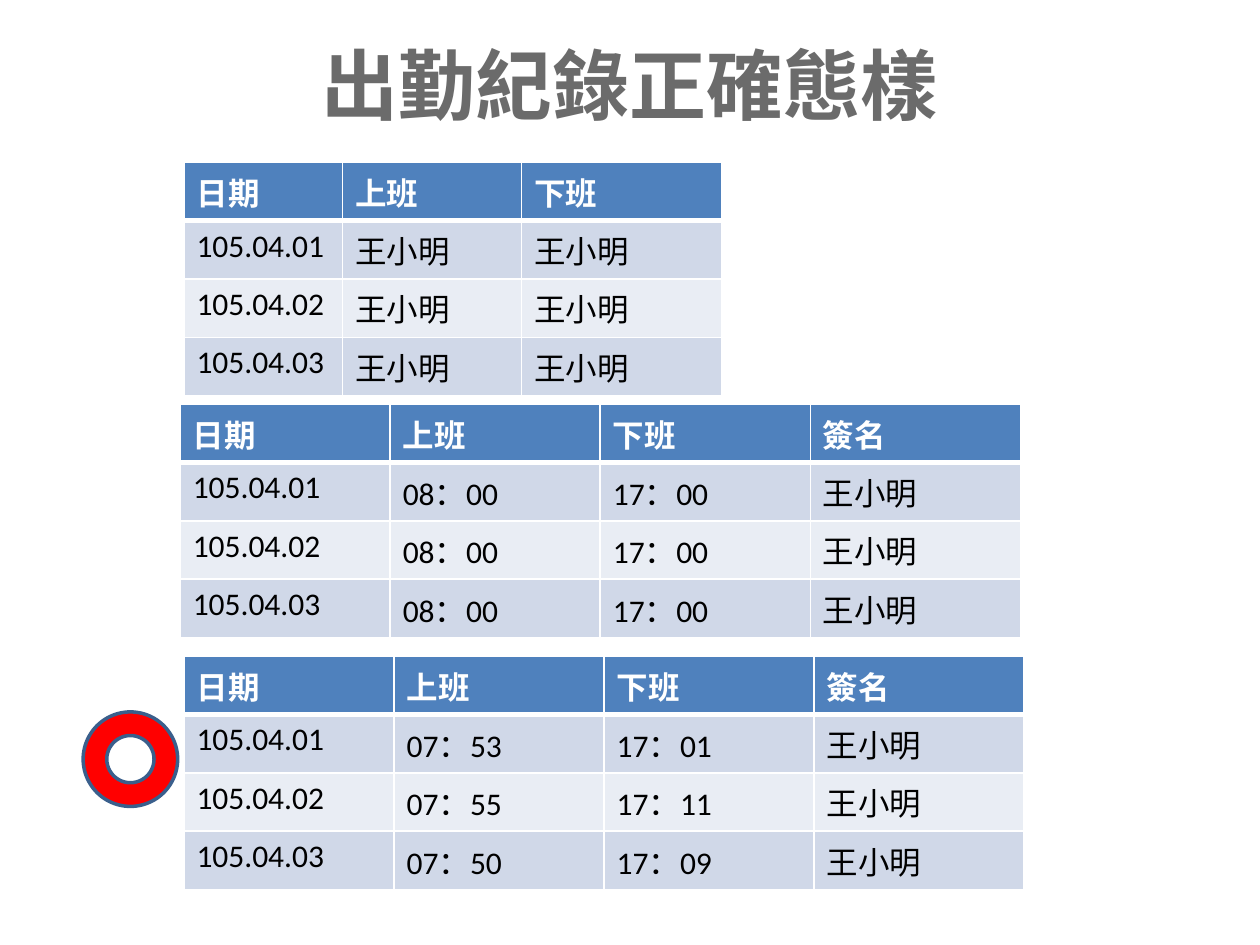
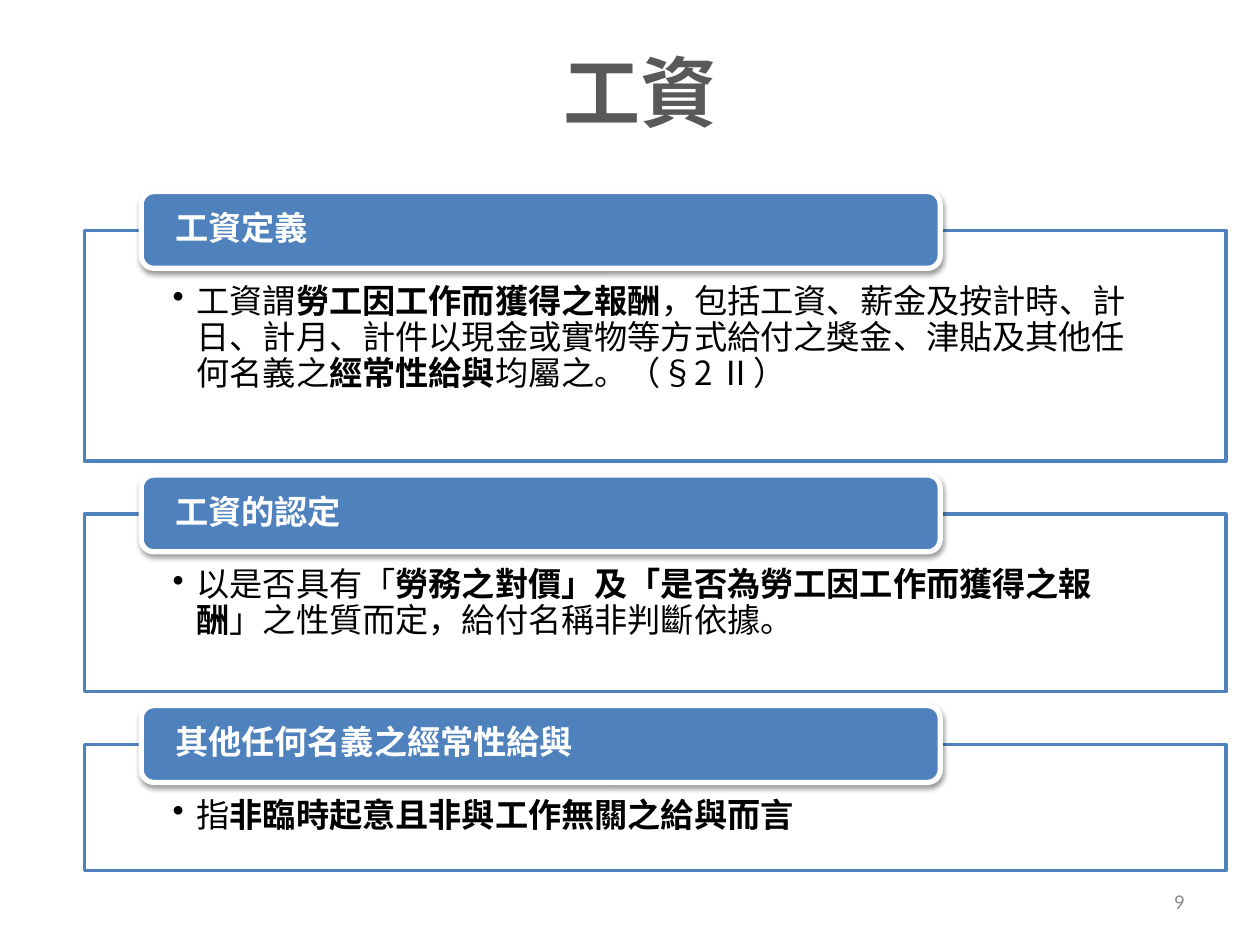
from copy import deepcopy

from lxml import etree
from pptx import Presentation
from pptx.dml.color import RGBColor
from pptx.enum import shapes, text
from pptx.oxml import ns
from pptx.util import Inches, Pt

CJK, LATIN = "Noto Sans CJK SC", "Calibri"
BLUE, WHITE, BLACK = "4F81BD", "FFFFFF", "000000"
BANDS = ["D0D8E8", "E9EDF4"]
TITLE_GRADIENT = [(0, "4C4C4C"), (0.5, "6B6B6B"), (1, "808080")]
DATES = ["105.04.01", "105.04.02", "105.04.03"]
WORKER = "王小明"


def color(code):
    return RGBColor.from_string(code)


def add_xml(parent, tag, **attributes):
    child = etree.SubElement(parent, ns.qn(tag))
    for name, value in attributes.items():
        child.set(name, str(value))
    return child


def add_color_xml(parent, code, alpha=100):
    entry = add_xml(parent, "a:srgbClr", val=code)
    if alpha < 100:
        add_xml(entry, "a:alpha", val=alpha * 1000)


def format_span(span, size, code, bold=False, face=CJK):
    span.font.size, span.font.bold, span.font.name = Pt(size), bold, face
    span.font.fill.solid()
    span.font.fill.fore_color.rgb = color(code)
    add_xml(span._r.get_or_add_rPr(), "a:ea", typeface=CJK)


def add_page(deck, title, box, code):
    page = deck.slides.add_slide(deck.slide_layouts[5])
    heading = page.shapes.title
    heading.left, heading.top, heading.width, heading.height = map(Inches, box)
    frame = heading.text_frame
    frame.text = title
    frame.vertical_anchor = text.MSO_ANCHOR.MIDDLE
    para = frame.paragraphs[0]
    para.alignment = text.PP_ALIGN.CENTER
    format_span(para.runs[0], 44, code, True)
    return page


def shade_title(page):
    """Give the title a vertical three-stop gradient."""
    span = page.shapes.title.text_frame.paragraphs[0].runs[0]
    fill = span.font.fill
    fill.gradient()
    fill.gradient_angle = 90
    stop_list = span._r.get_or_add_rPr().find(".//" + ns.qn("a:gsLst"))
    stop_list.insert(1, deepcopy(stop_list[0]))
    for stop, (position, code) in zip(fill.gradient_stops, TITLE_GRADIENT):
        stop.position = position
        stop.color.rgb = color(code)


def format_cell(cell, row):
    header = row == 0
    properties = cell._tc.get_or_add_tcPr()
    for side in "LRTB":
        heavy = (header and side == "B") or (row == 1 and side == "T")
        line = add_xml(properties, f"a:ln{side}", w=Pt(3 if heavy else 1))
        add_color_xml(add_xml(line, "a:solidFill"), WHITE)
    cell.fill.solid()
    cell.fill.fore_color.rgb = color(BLUE if header else BANDS[(row - 1) % 2])
    span = cell.text_frame.paragraphs[0].runs[0]
    format_span(span, 18, WHITE if header else BLACK, header, LATIN)


def add_attendance(page, left, top, widths, row_height, rows):
    frame = page.shapes.add_table(
        len(rows), len(widths), Inches(left), Inches(top),
        Inches(sum(widths)), Inches(row_height * len(rows)))
    table = frame.table
    for column, width in zip(table.columns, widths):
        column.width = Inches(width)
    for r, values in enumerate(rows):
        table.rows[r].height = Inches(row_height)
        for c, value in enumerate(values):
            cell = table.cell(r, c)
            cell.text = value
            format_cell(cell, r)


def add_box(page, kind, box, fill, line, weight):
    shape = page.shapes.add_shape(kind, *map(Inches, box))
    shape.shadow.inherit = False
    shape.fill.solid()
    shape.fill.fore_color.rgb = color(fill)
    shape.line.color.rgb = color(line)
    shape.line.width = Pt(weight)
    return shape


def start_text(shape, anchor, side, top=0, bottom=0):
    frame = shape.text_frame
    frame.word_wrap = True
    frame.vertical_anchor = anchor
    frame.margin_left = frame.margin_right = Inches(side)
    frame.margin_top, frame.margin_bottom = Inches(top), Inches(bottom)
    para = frame.paragraphs[0]
    para.alignment = text.PP_ALIGN.LEFT
    para.line_spacing = 0.9
    return para


def add_topic(page, left, top, width, height, heading, parts):
    """Outlined panel with one bullet and a heading tab over its top edge."""
    panel = add_box(page, shapes.MSO_SHAPE.RECTANGLE,
                    (left, top, width, height), WHITE, BLUE, 2)
    fill = panel._element.spPr.find(ns.qn("a:solidFill"))
    add_xml(fill[0], "a:alpha", val=90000)
    para = start_text(panel, text.MSO_ANCHOR.TOP, 0.7, 0.43, 0.15)
    properties = para._p.get_or_add_pPr()
    properties.set("marL", str(Inches(0.19)))
    properties.set("indent", str(Inches(-0.19)))
    add_xml(properties, "a:buChar", char="•")
    for index, part in enumerate(parts):
        span = para.add_run()
        span.text = part
        format_span(span, 19, BLACK, index % 2 == 1)

    tab = add_box(page, shapes.MSO_SHAPE.ROUNDED_RECTANGLE,
                  (left + 0.45, top - 0.31, width * 0.7, 0.61), BLUE, WHITE, 3)
    effects = tab._element.spPr.find(ns.qn("a:effectLst"))
    shadow = add_xml(effects, "a:outerShdw", blurRad=Pt(3.1), dist=Pt(1.6),
                     dir=5400000, rotWithShape=0)
    add_color_xml(shadow, BLACK, 38)
    para = start_text(tab, text.MSO_ANCHOR.MIDDLE, 0.24)
    para.text = heading
    format_span(para.runs[0], 19, WHITE, True)


def add_page_number(page, number):
    box = page.shapes.add_textbox(Inches(7.17), Inches(6.95), Inches(2.33), Inches(0.4))
    frame = box.text_frame
    frame.word_wrap = True
    frame.vertical_anchor = text.MSO_ANCHOR.MIDDLE
    frame.text = number
    para = frame.paragraphs[0]
    para.alignment = text.PP_ALIGN.RIGHT
    format_span(para.runs[0], 12, "8C8C8C", face=LATIN)


def build_attendance(deck):
    page = add_page(deck, "出勤紀錄正確態樣", (0.5, 0.25, 9, 0.83), "6B6B6B")
    shade_title(page)
    header = ["日期", "上班", "下班"]
    signed = [header] + [[date, WORKER, WORKER] for date in DATES]
    add_attendance(page, 1.46, 1.29, [1.26, 1.42, 1.59], 0.4, signed)
    ring = add_box(page, shapes.MSO_SHAPE.DONUT, (0.66, 5.65, 0.75, 0.75),
                   "FF0000", "3A5F8C", 2)
    ring.adjustments[0] = 0.25
    fixed_times = [("08：00", "17：00")] * 3
    actual_times = [("07：53", "17：01"), ("07：55", "17：11"), ("07：50", "17：09")]
    for left, top, times in [(1.43, 3.21, fixed_times), (1.46, 5.21, actual_times)]:
        rows = [header + ["簽名"]]
        rows += [[date, *pair, WORKER] for date, pair in zip(DATES, times)]
        add_attendance(page, left, top, [1.667] * 4, 0.41, rows)


def build_wages(deck):
    page = add_page(deck, "工資", (0.67, 0.25, 8.83, 0.94), "595959")
    add_page_number(page, "9")
    # Plain and bold parts alternate, starting with plain.
    topics = [
        (1.83, 1.83, "工資定義",
         ["工資謂", "勞工因工作而獲得之報酬",
          "，包括工資、薪金及按計時、計日、計月、計件以現金或實物等方式給付之獎金、津貼及其他任何名義之",
          "經常性給與", "均屬之。（§2 Ⅱ）"]),
        (4.08, 1.41, "工資的認定",
         ["以是否具有「", "勞務之對價」及「是否為勞工因工作而獲得之報酬",
          "」之性質而定，給付名稱非判斷依據。"]),
        (5.91, 1, "其他任何名義之經常性給與",
         ["指", "非臨時起意且非與工作無關之給與而言"]),
    ]
    for top, height, heading, parts in topics:
        add_topic(page, 0.67, top, 9.06, height, heading, parts)


def main():
    deck = Presentation()
    deck.slide_width, deck.slide_height = Inches(10), Inches(7.5)
    build_attendance(deck)
    build_wages(deck)
    deck.save("out.pptx")


if __name__ == "__main__":
    main()
